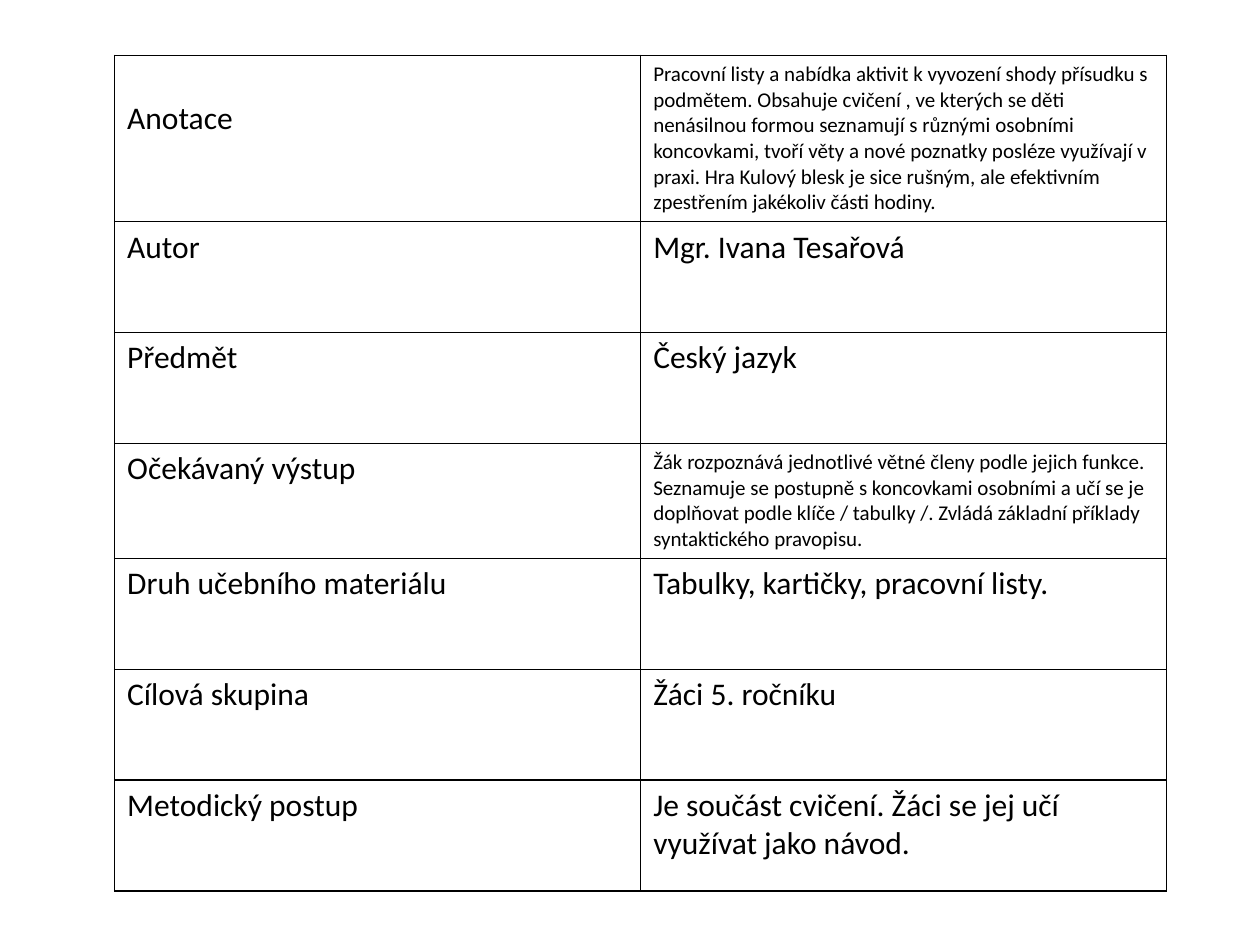
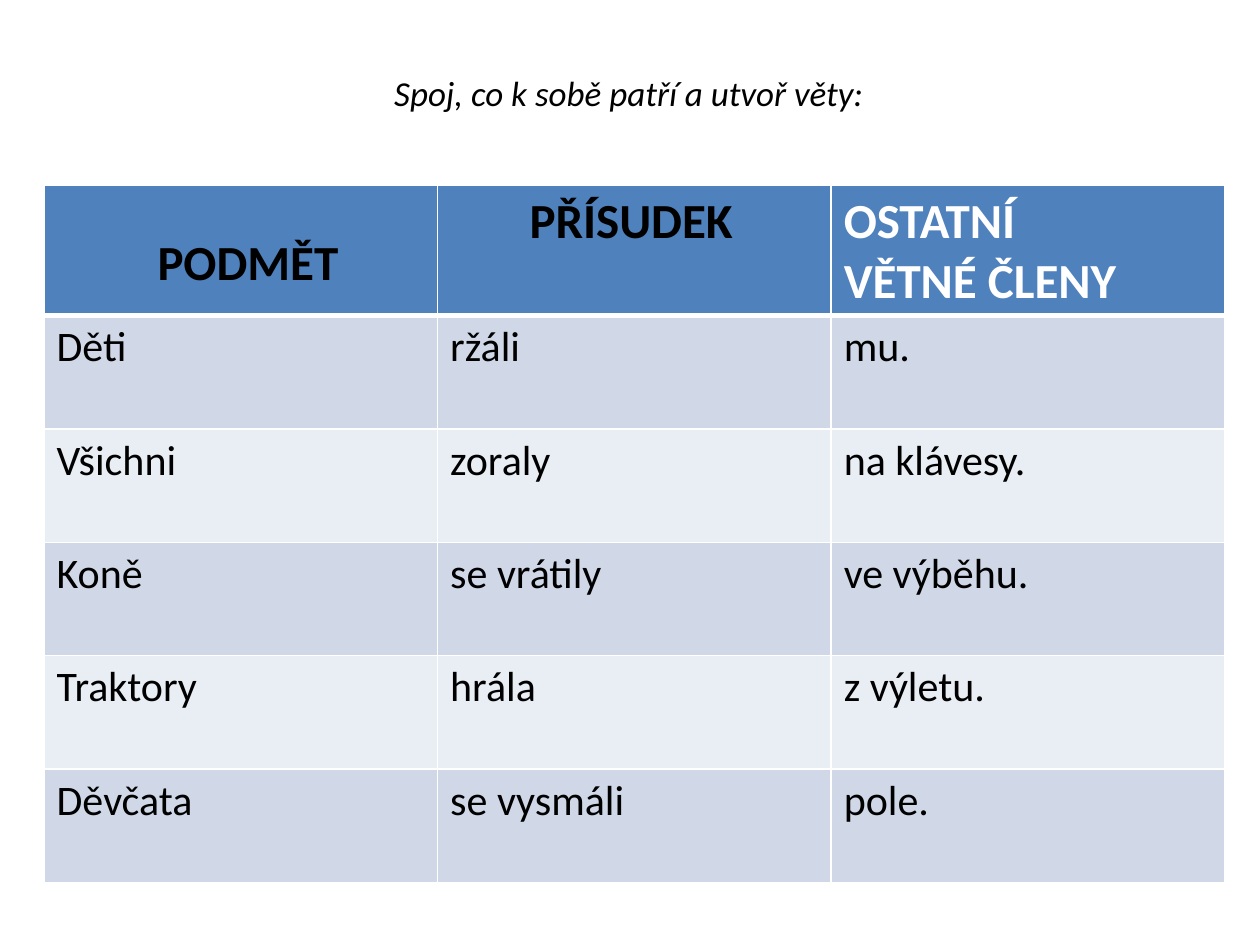
import pptx
import pptx.util
import pptx.dml.color
import pptx.oxml
import pptx.oxml.ns

Inches = pptx.util.Inches
Pt = pptx.util.Pt
RGB = pptx.dml.color.RGBColor

BLACK = RGB(0x00, 0x00, 0x00)
WHITE = RGB(0xFF, 0xFF, 0xFF)
BLUE = RGB(0x4F, 0x81, 0xBD)
BANDS = [RGB(0xD0, 0xD8, 0xE8), RGB(0xE9, 0xED, 0xF4)]
FONT = "Calibri"


def style(frame, size, color=BLACK, bold=False, italic=False):
    for para in frame.paragraphs:
        for run in para.runs:
            run.font.name = FONT
            run.font.size = Pt(size)
            run.font.color.rgb = color
            run.font.bold = bold
            run.font.italic = italic


def grid(slide, left, top, width, heights, rows, line, head=1):
    """Add a filled-in table; head is the width of the line under row one."""
    table = slide.shapes.add_table(
        len(rows), len(rows[0]), Inches(left), Inches(top),
        Inches(width), Inches(sum(heights))).table
    for r, row in enumerate(rows):
        table.rows[r].height = Inches(heights[r])
        for c, text in enumerate(row):
            cell = table.cell(r, c)
            cell.text_frame.text = text
            cell.fill.background()
            props = cell._tc.get_or_add_tcPr()
            for i, side in enumerate("LRTB"):
                thick = head if (r, side) in [(0, "B"), (1, "T")] else 1
                props.insert(i, pptx.oxml.parse_xml(
                    f'<a:ln{side} {pptx.oxml.ns.nsdecls("a")} w="{Pt(thick)}">'
                    f'<a:solidFill><a:srgbClr val="{line}"/></a:solidFill>'
                    f'</a:ln{side}>'))
    return table


deck = pptx.Presentation()
deck.slide_width = Inches(10)
deck.slide_height = Inches(7.5)
blank = deck.slide_layouts[6]

# Slide 1: facts about the lesson
facts = [
    ("Anotace", "Pracovní listy a nabídka aktivit k vyvození shody přísudku s "
     "podmětem. Obsahuje cvičení , ve kterých se děti nenásilnou formou "
     "seznamují s různými osobními koncovkami, tvoří věty a nové poznatky "
     "posléze využívají v praxi. Hra Kulový blesk je sice rušným, ale "
     "efektivním zpestřením jakékoliv části hodiny."),
    ("Autor", "Mgr. Ivana Tesařová"),
    ("Předmět", "Český jazyk"),
    ("Očekávaný výstup",
     "Žák rozpoznává jednotlivé větné členy podle jejich funkce.\n"
     "Seznamuje se postupně s koncovkami osobními a učí se je\n"
     "doplňovat podle klíče / tabulky /. Zvládá základní příklady "
     "syntaktického pravopisu."),
    ("Druh učebního materiálu", "Tabulky, kartičky, pracovní listy."),
    ("Cílová skupina", "Žáci 5. ročníku"),
    ("Metodický postup",
     "Je součást cvičení. Žáci se jej učí využívat jako návod."),
]
slide = deck.slides.add_slide(blank)
table = grid(slide, 0.91, 0.44, 8.35, [0.88] * len(facts), facts, BLACK)
for cell in table.iter_cells():
    style(cell.text_frame, 12 if len(cell.text_frame.text) > 60 else 18)
table.cell(0, 0).margin_top = Inches(0.35)

# Slide 2: task line
slide = deck.slides.add_slide(blank)
task = slide.shapes.add_textbox(
    Inches(3.03), Inches(0.52), Inches(3.95), Inches(1.11)).text_frame
task.word_wrap = False
task.text = "Spoj, co k sobě patří a utvoř věty:"
style(task, 20, italic=True)

# Slide 2: sentence parts to match
parts = [
    ("PODMĚT", "PŘÍSUDEK", "OSTATNÍ\nVĚTNÉ ČLENY"),
    ("Děti", "ržáli", "mu."),
    ("Všichni", "zoraly", "na klávesy."),
    ("Koně", "se vrátily", "ve výběhu."),
    ("Traktory", "hrála", "z výletu."),
    ("Děvčata", "se vysmáli", "pole."),
]
heights = [1.02] + [0.9] * 5
table = grid(slide, 0.35, 1.47, 9.37, heights, parts, WHITE, head=3)
for n, cell in enumerate(table.iter_cells()):
    r, c = divmod(n, 3)
    cell.fill.solid()
    cell.fill.fore_color.rgb = BANDS[(r - 1) % 2] if r else BLUE
    if r:
        style(cell.text_frame, 24)
    else:
        style(cell.text_frame, 28, WHITE if c == 2 else BLACK, bold=True)
        cell.margin_left = Inches([0.9, 0.73, 0.1][c])
table.cell(0, 0).margin_top = Inches(0.39)

deck.save("out.pptx")
